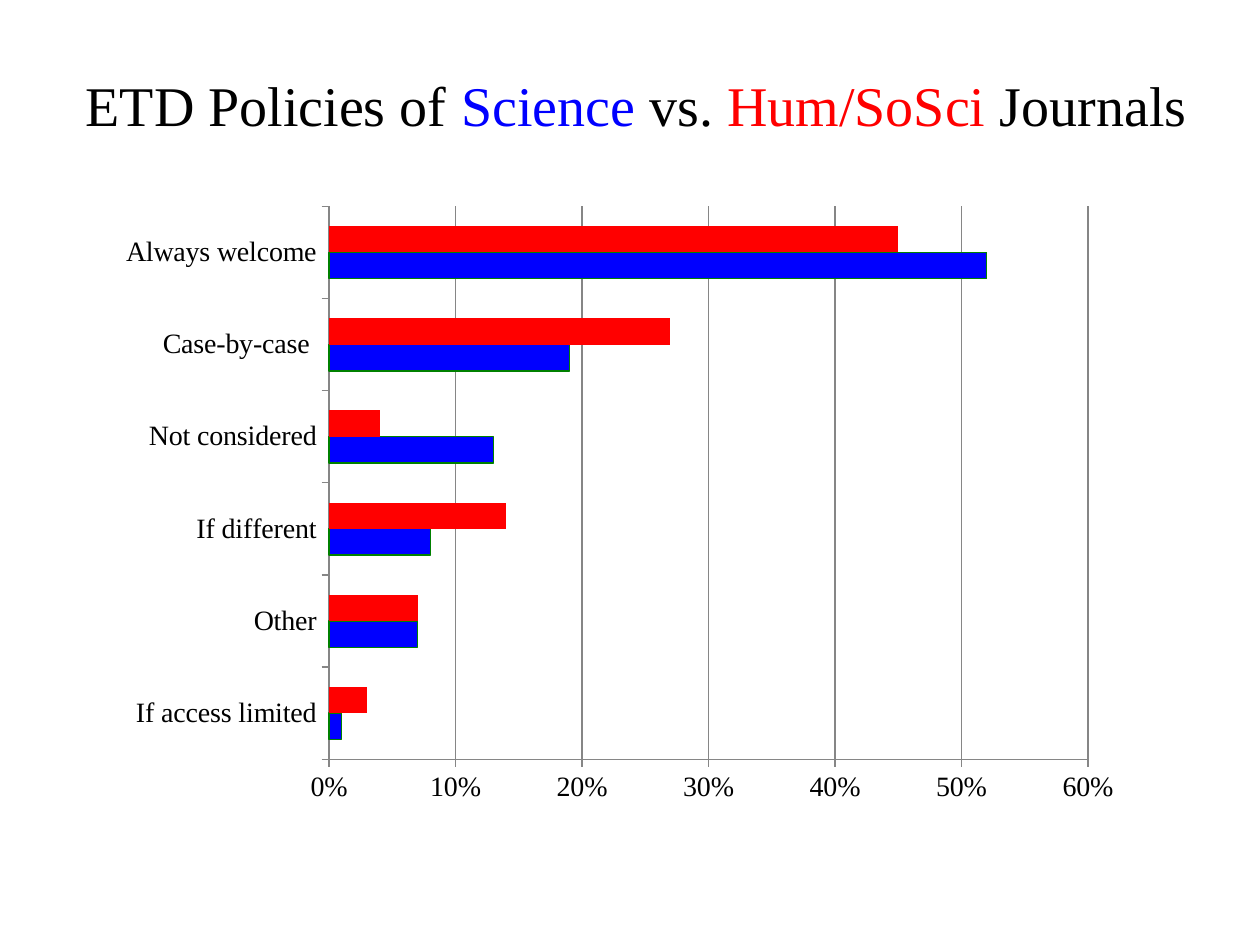
from dataclasses import dataclass

from lxml import etree
from pptx import Presentation
from pptx.chart.data import CategoryChartData
from pptx.dml.color import RGBColor
from pptx.enum.chart import XL_CHART_TYPE as ChartType, XL_TICK_MARK as TickMark
from pptx.enum.text import MSO_ANCHOR as Anchor, PP_ALIGN as Align
from pptx.oxml.ns import qn
from pptx.util import Inches, Pt


@dataclass(frozen=True)
class Theme:
    """Colours, font and type sizes of the slide."""
    font: str = "Times New Roman"
    text: RGBColor = RGBColor(0, 0, 0)
    science: RGBColor = RGBColor(0, 0, 255)
    humanities: RGBColor = RGBColor(255, 0, 0)
    outline: RGBColor = RGBColor(0, 128, 0)
    axis: RGBColor = RGBColor(134, 134, 134)
    title_size: Pt = Pt(32)
    chart_size: Pt = Pt(16)
    line: Pt = Pt(0.75)


THEME = Theme()
TITLE_BOX = (Inches(0.33), Inches(0.3), Inches(9.44), Inches(1.05))
CHART_BOX = (Inches(0.82), Inches(1.54), Inches(8.14), Inches(4.93))
PLOT_LAYOUT = {"x": 0.22, "y": 0.02, "w": 0.74, "h": 0.89}
TITLE_PARTS = [
    ("ETD Policies of ", THEME.text),
    ("Science ", THEME.science),
    ("vs. ", THEME.text),
    ("Hum/SoSci ", THEME.humanities),
    ("Journals", THEME.text),
]
POLICIES = ["If access limited", "Other", "If different",
            "Not considered", "Case-by-case ", "Always welcome"]
SCIENCE_SHARES = [0.01, 0.07, 0.08, 0.13, 0.19, 0.52]
HUMANITIES_SHARES = [0.03, 0.07, 0.14, 0.04, 0.27, 0.45]


def add_title(slide, box):
    """Fill the title placeholder with coloured phrases."""
    title = slide.shapes.title
    title.left, title.top, title.width, title.height = box
    title.text_frame.vertical_anchor = Anchor.MIDDLE
    heading = title.text_frame.paragraphs[0]
    heading.alignment = Align.CENTER
    heading.font.name, heading.font.size = THEME.font, THEME.title_size
    for words, color in TITLE_PARTS:
        phrase = heading.add_run()
        phrase.text = words
        phrase.font.color.rgb = color


def set_plot_layout(chart):
    """Fix the inner plot area as fractions of the chart."""
    plot_area = chart.plots[0]._element.getparent()
    layout = plot_area.find(qn("c:layout"))
    if layout is None:
        layout = etree.Element(qn("c:layout"))
        plot_area.insert(0, layout)
    manual = etree.SubElement(layout, qn("c:manualLayout"))
    settings = {"layoutTarget": "inner", "xMode": "edge", "yMode": "edge", **PLOT_LAYOUT}
    for tag, value in settings.items():
        etree.SubElement(manual, qn(f"c:{tag}")).set("val", str(value))


def style_line(line):
    """Give an axis or gridline its thin grey stroke."""
    line.color.rgb = THEME.axis
    line.width = THEME.line


def add_policy_chart(slide, box):
    """Compare journal policies as clustered bars."""
    shares = CategoryChartData(number_format="0%")
    shares.categories = POLICIES
    shares.add_series("Series 1", SCIENCE_SHARES)
    shares.add_series("Series 2", HUMANITIES_SHARES)
    chart = slide.shapes.add_chart(ChartType.BAR_CLUSTERED, *box, shares).chart
    chart.has_legend = chart.has_title = False
    chart.font.name, chart.font.size = THEME.font, THEME.chart_size
    chart.font.color.rgb = THEME.text
    set_plot_layout(chart)

    bars = chart.plots[0]
    bars.gap_width, bars.overlap, bars.vary_by_categories = 150, 0, False
    science, humanities = bars.series
    for series, color in ((science, THEME.science), (humanities, THEME.humanities)):
        series.format.fill.solid()
        series.format.fill.fore_color.rgb = color
    science.format.line.color.rgb = THEME.outline
    science.format.line.width = THEME.line
    humanities.format.line.fill.background()

    for axis in (chart.category_axis, chart.value_axis):
        axis.major_tick_mark, axis.minor_tick_mark = TickMark.OUTSIDE, TickMark.NONE
        style_line(axis.format.line)
    percent = chart.value_axis
    percent.minimum_scale, percent.maximum_scale, percent.major_unit = 0, 0.6, 0.1
    percent.tick_labels.number_format = "0%"
    percent.tick_labels.number_format_is_linked = False
    percent.has_major_gridlines = True
    style_line(percent.major_gridlines.format.line)


def main():
    """Build and save the slide."""
    deck = Presentation()
    deck.slide_width, deck.slide_height = Inches(10), Inches(7.5)
    slide = deck.slides.add_slide(deck.slide_layouts[5])
    add_title(slide, TITLE_BOX)
    add_policy_chart(slide, CHART_BOX)
    deck.save("out.pptx")


if __name__ == "__main__":
    main()
